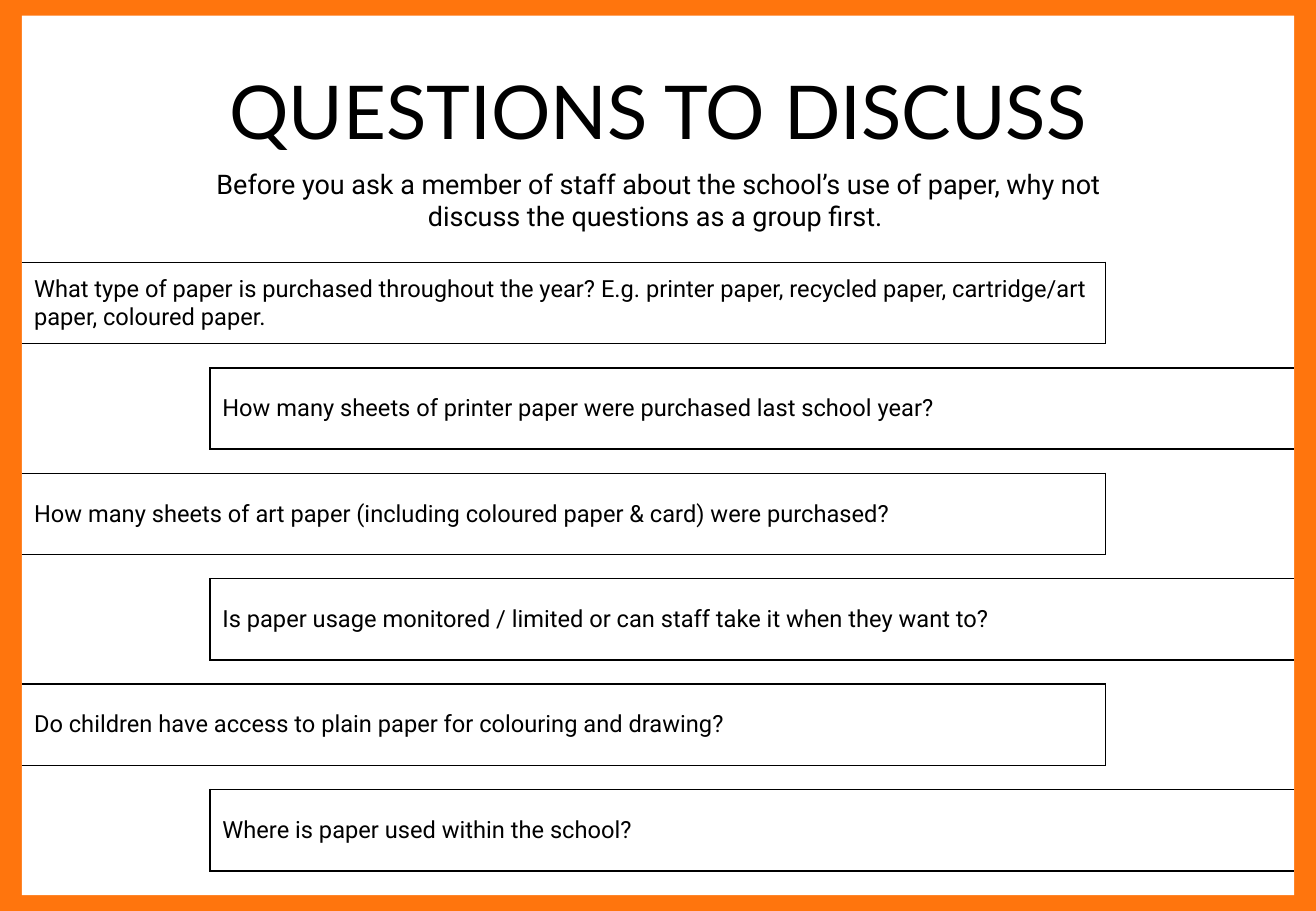
from lxml.etree import SubElement
from pptx import Presentation
from pptx.dml.color import RGBColor
from pptx.enum.shapes import MSO_SHAPE
from pptx.enum.text import MSO_ANCHOR, PP_ALIGN
from pptx.oxml.ns import qn
from pptx.util import Inches, Pt

TITLE = "QUESTIONS TO DISCUSS"
INTRO = ("Before you ask a member of staff about the school’s use of paper, "
         "why not discuss the questions as a group first. ")
QUESTIONS = [
    "What type of paper is purchased throughout the year? E.g. printer paper, "
    "recycled paper, cartridge/art paper, coloured paper.",
    "How many sheets of printer paper were purchased last school year?",
    "How many sheets of art paper (including coloured paper & card) were purchased?",
    "Is paper usage monitored / limited or can staff take it when they want to?",
    "Do children have access to plain paper for colouring and drawing?",
    "Where is paper used within the school?",
]
COLOURS = {"frame": "FF750D", "page": "FFFFFF", "ink": "000000"}
WIDTH, HEIGHT = 10.83, 7.5
PAGE = (0.18, 0.13, 10.47, 7.24)
ROW_TOP, ROW_STEP, ROW_WIDTH, ROW_HEIGHT = 2.16, 0.868, 8.92, 0.67


def colour(name):
    return RGBColor.from_string(COLOURS[name])


def write(frame, text, font="Roboto", size=14, align=PP_ALIGN.LEFT):
    frame.word_wrap = True
    para = frame.paragraphs[0]
    para.alignment = align
    run = para.add_run()
    run.text = text
    run.font.name = font
    run.font.size = Pt(size)
    run.font.color.rgb = colour("ink")


def add_label(slide, box, text, **style):
    label = slide.shapes.add_textbox(*map(Inches, box))
    write(label.text_frame, text, align=PP_ALIGN.CENTER, **style)


def set_borders(cell, sides):
    """Rule the given sides (from L, R, T, B) and leave the others bare."""
    props = cell._tc.get_or_add_tcPr()
    for place, side in enumerate("LRTB"):
        line = SubElement(props, qn(f"a:ln{side}"), w=str(Pt(1)))
        if side in sides:
            fill = SubElement(line, qn("a:solidFill"))
            SubElement(fill, qn("a:srgbClr"), val=COLOURS["ink"])
        else:
            SubElement(line, qn("a:noFill"))
        props.insert(place, line)


def add_question(slide, left, top, text, sides):
    box = map(Inches, (left, top, ROW_WIDTH, ROW_HEIGHT))
    table = slide.shapes.add_table(1, 1, *box).table
    table.first_row = table.horz_banding = False
    cell = table.cell(0, 0)
    cell.fill.background()
    cell.vertical_anchor = MSO_ANCHOR.MIDDLE
    write(cell.text_frame, text)
    set_borders(cell, sides)


def main():
    deck = Presentation()
    deck.slide_width, deck.slide_height = Inches(WIDTH), Inches(HEIGHT)
    slide = deck.slides.add_slide(deck.slide_layouts[6])
    slide.background.fill.solid()
    slide.background.fill.fore_color.rgb = colour("frame")

    page = slide.shapes.add_shape(MSO_SHAPE.RECTANGLE, *map(Inches, PAGE))
    page.shadow.inherit = False
    page.fill.solid()
    page.fill.fore_color.rgb = colour("page")
    page.line.fill.background()

    add_label(slide, (1.3, 0.49, 8.24, 0.84), TITLE, font="Lato", size=44)
    add_label(slide, (1.48, 1.33, 7.88, 0.64), INTRO, size=16)

    # Rows touch the left and right page edges in turn, open on that side
    lefts = (PAGE[0], PAGE[0] + PAGE[2] - ROW_WIDTH)
    for i, text in enumerate(QUESTIONS):
        add_question(slide, lefts[i % 2], ROW_TOP + i * ROW_STEP, text,
                     ("RTB", "LTB")[i % 2])
    deck.save("out.pptx")


if __name__ == "__main__":
    main()
